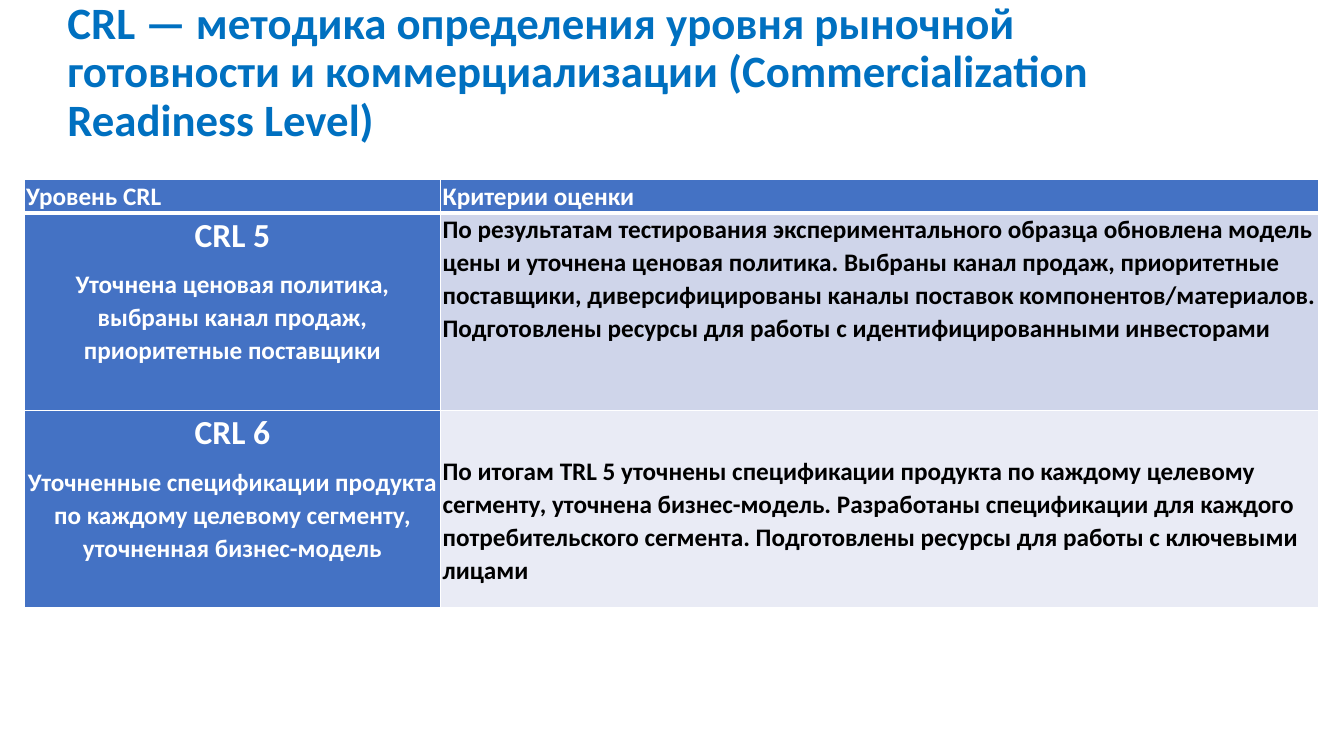
from dataclasses import dataclass

import pptx
import pptx.dml.color
import pptx.enum.text
import pptx.oxml
import pptx.oxml.ns
import pptx.util

Inches = pptx.util.Inches
Pt = pptx.util.Pt
ALIGN = pptx.enum.text.PP_ALIGN
ANCHOR = pptx.enum.text.MSO_ANCHOR


@dataclass(frozen=True)
class Theme:
    font: str = "Calibri"
    title_color: str = "0070C0"
    accent: str = "4472C4"
    bands: tuple = ("CFD5EA", "E9EBF5")
    light: str = "FFFFFF"
    dark: str = "000000"
    title_size: int = 32
    level_size: int = 24
    body_size: int = 18


TITLE = ("CRL — методика определения уровня рыночной готовности "
         "и коммерциализации (Commercialization Readiness Level)")
HEADERS = ("Уровень СRL", "Критерии оценки")
# Level, summary, criteria, top inset of the criteria cell
LEVELS = (
    ("CRL 5",
     "Уточнена ценовая политика, выбраны канал продаж, приоритетные поставщики",
     "По результатам тестирования экспериментального образца обновлена модель цены "
     "и уточнена ценовая политика. Выбраны канал продаж, приоритетные поставщики, "
     "диверсифицированы каналы поставок компонентов/материалов. Подготовлены ресурсы "
     "для работы с идентифицированными инвесторами", 0),
    ("CRL 6",
     "Уточненные спецификации продукта по каждому целевому сегменту, "
     "уточненная бизнес-модель",
     "По итогам TRL 5 уточнены спецификации продукта по каждому целевому сегменту, "
     "уточнена бизнес-модель. Разработаны спецификации для каждого потребительского "
     "сегмента. Подготовлены ресурсы для работы с ключевыми лицами", 0.44),
)


class SlideBuilder:
    def __init__(self, slide, theme):
        self.slide = slide
        self.theme = theme

    def fill_text(self, frame, lines, color, align=ALIGN.LEFT, spacing=1.07, after=8):
        """Fill a text frame with (text, size) lines in bold."""
        frame.word_wrap = True
        frame.text = "\n".join(text for text, _ in lines)
        for para, (_, size) in zip(frame.paragraphs, lines):
            para.alignment = align
            para.line_spacing = spacing
            para.space_after = Pt(after)
            for span in para.runs:
                span.font.name = self.theme.font
                span.font.size = Pt(size)
                span.font.bold = True
                span.font.color.rgb = pptx.dml.color.RGBColor.from_string(color)

    def title(self, text, left, top, width, height):
        box = self.slide.shapes.add_textbox(
            Inches(left), Inches(top), Inches(width), Inches(height))
        box.text_frame.vertical_anchor = ANCHOR.MIDDLE
        self.fill_text(box.text_frame, [(text, self.theme.title_size)],
                       self.theme.title_color, spacing=0.9, after=0)

    def table(self, left, top, widths, heights):
        table = self.slide.shapes.add_table(
            len(heights), len(widths), Inches(left), Inches(top),
            Inches(sum(widths)), Inches(sum(heights))).table
        for column, width in zip(table.columns, widths):
            column.width = Inches(width)
        for row, height in zip(table.rows, heights):
            row.height = Inches(height)
        return table

    def borders(self, cell, top, bottom):
        properties = cell._tc.get_or_add_tcPr()
        for side, width in (("L", 1), ("R", 1), ("T", top), ("B", bottom)):
            properties.append(pptx.oxml.parse_xml(
                f'<a:ln{side} {pptx.oxml.ns.nsdecls("a")} w="{Pt(width)}">'
                f'<a:solidFill><a:srgbClr val="{self.theme.light}"/></a:solidFill>'
                f'</a:ln{side}>'))

    def cell(self, cell, lines, fill, color, align=ALIGN.LEFT,
             inset_top=0, top=1, bottom=1):
        cell.margin_left = cell.margin_right = Inches(0.02)
        cell.margin_top, cell.margin_bottom = Inches(inset_top), 0
        cell.vertical_anchor = ANCHOR.TOP
        self.borders(cell, top, bottom)
        cell.fill.solid()
        cell.fill.fore_color.rgb = pptx.dml.color.RGBColor.from_string(fill)
        self.fill_text(cell.text_frame, lines, color, align)


def main():
    theme = Theme()
    deck = pptx.Presentation()
    deck.slide_width, deck.slide_height = Inches(13.33), Inches(7.5)
    page = SlideBuilder(deck.slides.add_slide(deck.slide_layouts[6]), theme)

    # Heading
    page.title(TITLE, 0.57, 0, 11.5, 1.45)

    # Table header
    table = page.table(0.24, 1.78, (4.13, 8.71), (0.33, 1.96, 1.96))
    for column, text in enumerate(HEADERS):
        page.cell(table.cell(0, column), [(text, theme.body_size)],
                  theme.accent, theme.light, bottom=3)

    # Readiness levels
    for row, (level, summary, criteria, inset) in enumerate(LEVELS, start=1):
        top = 3 if row == 1 else 1
        page.cell(table.cell(row, 0),
                  [(level, theme.level_size), (summary, theme.body_size)],
                  theme.accent, theme.light, ALIGN.CENTER, top=top)
        page.cell(table.cell(row, 1), [(criteria, theme.body_size)],
                  theme.bands[row - 1], theme.dark, inset_top=inset, top=top)

    deck.save("out.pptx")


if __name__ == "__main__":
    main()
